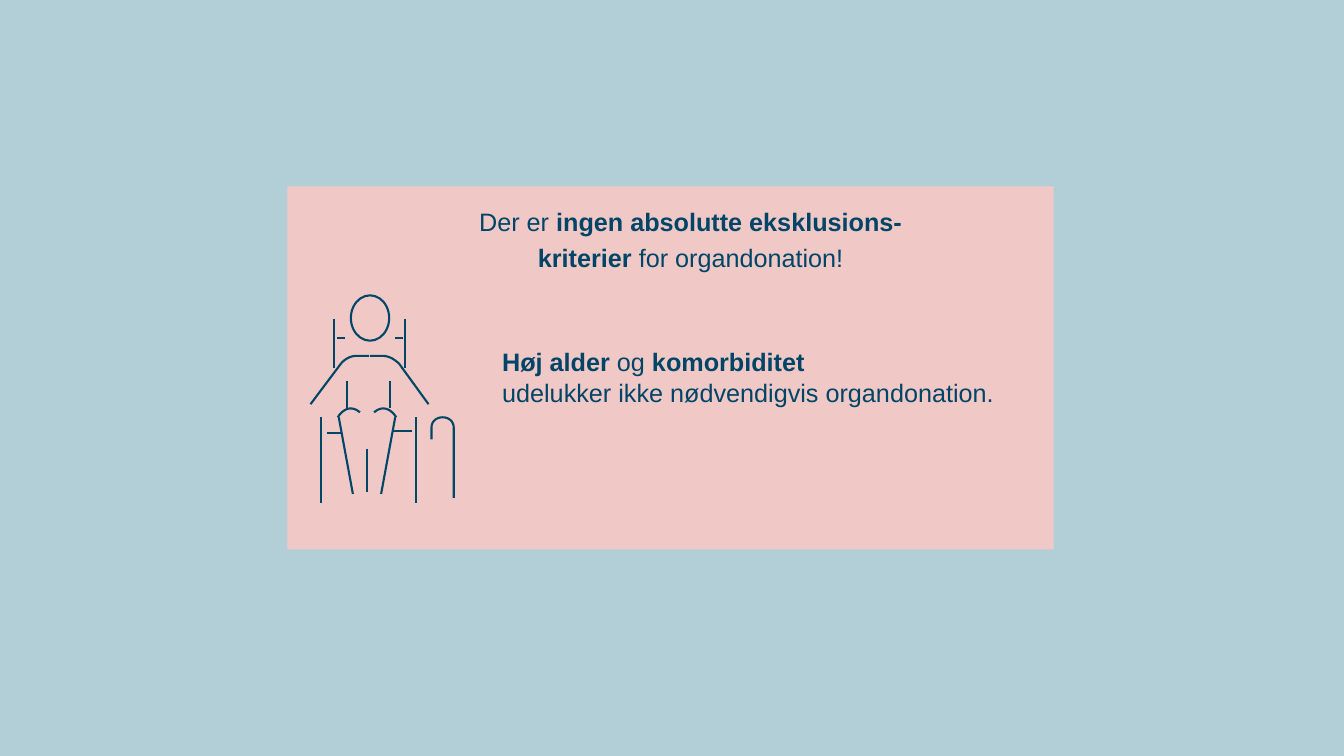
"""Build the slide on exclusion criteria for organ donation."""
from lxml.etree import SubElement
from pptx import Presentation
from pptx.dml.color import RGBColor
from pptx.enum.shapes import MSO_CONNECTOR, MSO_SHAPE
from pptx.enum.text import MSO_ANCHOR, MSO_AUTO_SIZE, PP_ALIGN
from pptx.oxml.ns import qn
from pptx.util import Pt

PX = 9144
BACKDROP = RGBColor(0xB2, 0xCE, 0xD6)
PINK = RGBColor(0xF0, 0xC9, 0xC6)
NAVY = RGBColor(0x00, 0x45, 0x67)
INK = RGBColor(0x00, 0x47, 0x67)
CURVE_STEPS = 12


def place_text(holder, left, top, width, height):
    """Position a placeholder and give it a plain frame."""
    holder.left, holder.top = left * PX, top * PX
    holder.width, holder.height = width * PX, height * PX
    frame = holder.text_frame
    frame.margin_left = frame.margin_right = 0
    frame.margin_top = frame.margin_bottom = 0
    frame.vertical_anchor = MSO_ANCHOR.TOP
    frame.auto_size = MSO_AUTO_SIZE.NONE
    frame.word_wrap = True
    return frame


def add_words(paragraph, words, bold):
    """Append one formatted run."""
    run = paragraph.add_run()
    run.text = words
    run.font.name = "Arial"
    run.font.size = Pt(18)
    run.font.bold = bold
    run.font.color.rgb = NAVY


prs = Presentation()
prs.slide_width, prs.slide_height = 1333 * PX, 750 * PX
slide = prs.slides.add_slide(prs.slide_layouts[1])
slide.background.fill.solid()
slide.background.fill.fore_color.rgb = BACKDROP

panel = slide.shapes.add_shape(
    MSO_SHAPE.RECTANGLE, 285 * PX, 185 * PX, 760 * PX, 360 * PX)
panel.shadow.inherit = False
panel.fill.solid()
panel.fill.fore_color.rgb = PINK
panel.line.fill.background()
slide.shapes.title.element.addprevious(panel.element)

heading = place_text(slide.shapes.title, 435, 205, 500, 70)
heading_lines = [
    [("Der er ", False), ("ingen absolutte eksklusions-", True)],
    [("kriterier", True), (" for organdonation!", False)],
]
for row, line in enumerate(heading_lines):
    paragraph = heading.add_paragraph() if row else heading.paragraphs[0]
    paragraph.alignment = PP_ALIGN.CENTER
    paragraph.space_before = Pt(4 * row)
    for words, bold in line:
        add_words(paragraph, words, bold)

message = place_text(slide.placeholders[1], 498, 343, 535, 70).paragraphs[0]
properties = message._p.get_or_add_pPr()
properties.set("marL", "0")
properties.set("indent", "0")
SubElement(properties, qn("a:buNone"))
message.space_before = Pt(0)
message.line_spacing = Pt(22)
add_words(message, "Høj alder", True)
add_words(message, " og ", False)
add_words(message, "komorbiditet", True)
message.add_line_break()
add_words(message, "udelukker ikke nødvendigvis organdonation.", False)

patient = slide.shapes.add_group_shape().shapes
strokes = []

head = patient.add_shape(
    MSO_SHAPE.OVAL, 348 * PX, 293 * PX, 38 * PX, 45 * PX)
head.shadow.inherit = False
head.fill.background()
strokes.append(head)

straight_lines = [
    (336, 414, 350, 490), (392, 414, 378, 490), (364, 445, 364, 488),
    (344, 378, 344, 405), (387, 378, 387, 405),
    (318, 414, 318, 499), (413, 414, 413, 499),
    (338, 430, 324, 430), (390, 428, 409, 428),
    (331, 316, 331, 365), (402, 316, 402, 365),
    (342, 335, 334, 335), (400, 335, 392, 335),
]
for ends in straight_lines:
    limb = patient.add_connector(
        MSO_CONNECTOR.STRAIGHT, *(value * PX for value in ends))
    SubElement(limb._element.spPr, qn("a:effectLst"))
    strokes.append(limb)

cane = [[(450, 494)], [(450, 424)], [(450, 418), (445, 414), (439, 414)],
        [(433, 414), (428, 418), (428, 424)], [(428, 436)]]
left_arm = [[(366, 353)], [(354, 353)],
            [(348, 353), (342, 356), (338, 361)], [(308, 401)]]
right_arm = [[(367, 353)], [(379, 353)],
             [(385, 353), (391, 356), (396, 361)], [(425, 401)]]
left_knee = [[(335, 414)], [(335, 414), (344, 398), (357, 409)]]
right_knee = [[(393, 414)], [(393, 414), (384, 398), (371, 409)]]
for outline in (cane, left_arm, right_arm, left_knee, right_knee):
    points = [outline[0][0]]
    for segment in outline[1:]:
        if len(segment) == 1:
            points += segment
            continue
        corners = [points[-1], *segment]
        for step in range(1, CURVE_STEPS + 1):
            t = step / CURVE_STEPS
            weights = ((1 - t) ** 3, 3 * t * (1 - t) ** 2,
                       3 * t ** 2 * (1 - t), t ** 3)
            points.append(tuple(
                sum(w * corner[axis] for w, corner in zip(weights, corners))
                for axis in (0, 1)))
    points = [(round(x * PX), round(y * PX)) for x, y in points]
    builder = patient.build_freeform(*points[0])
    builder.add_line_segments(points[1:], close=False)
    contour = builder.convert_to_shape()
    contour.shadow.inherit = False
    contour.fill.background()
    strokes.append(contour)

for stroke in strokes:
    stroke.line.color.rgb = INK
    stroke.line.width = Pt(1.5)

prs.save("out.pptx")
